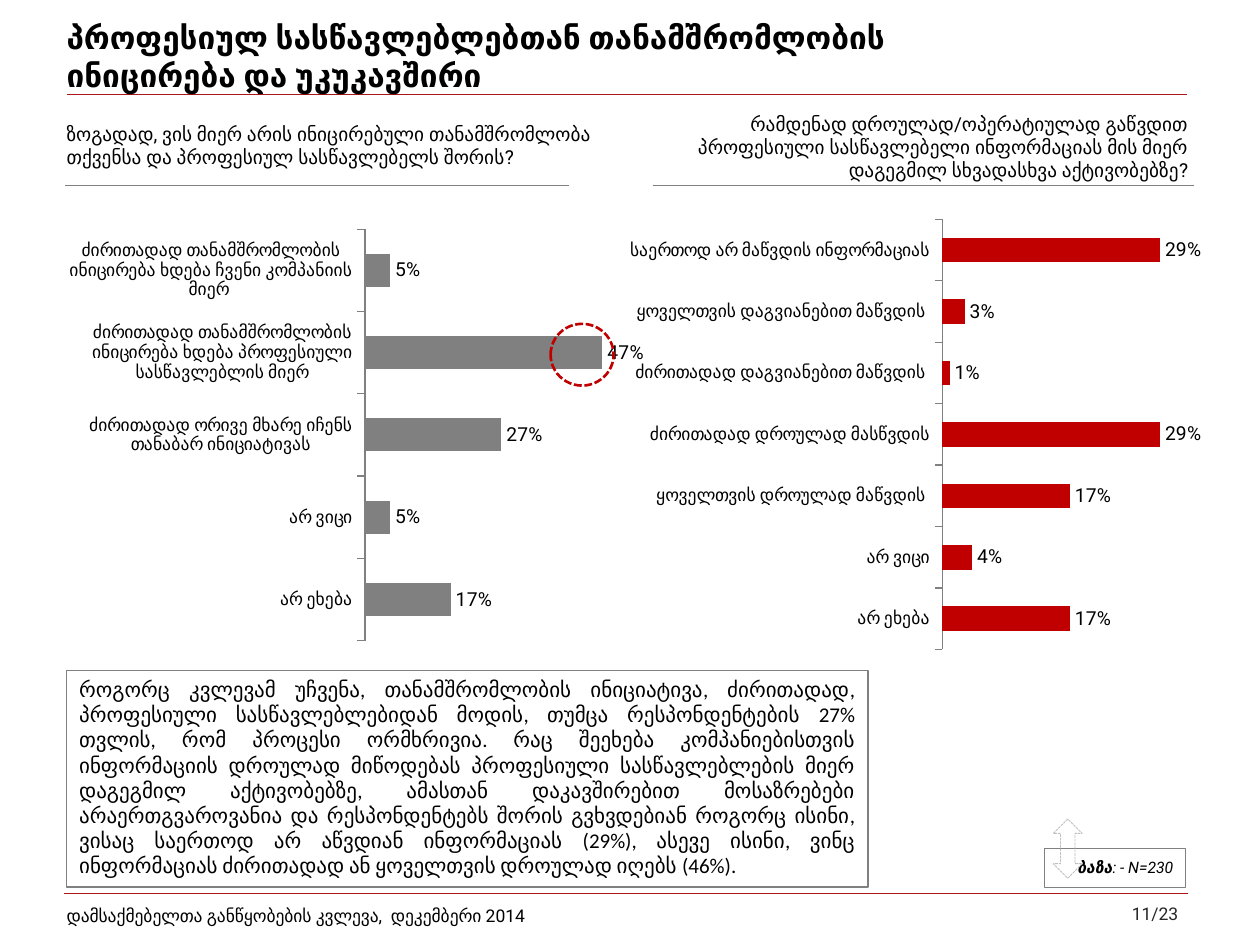
from dataclasses import dataclass

from lxml import etree
from pptx import Presentation
from pptx.chart.data import CategoryChartData
from pptx.dml.color import RGBColor
from pptx.enum.chart import XL_CHART_TYPE, XL_LABEL_POSITION, XL_TICK_LABEL_POSITION, XL_TICK_MARK
from pptx.enum.dml import MSO_LINE
from pptx.enum.shapes import MSO_CONNECTOR, MSO_SHAPE
from pptx.enum.text import MSO_ANCHOR, PP_ALIGN
from pptx.oxml import parse_xml
from pptx.oxml.ns import nsdecls, qn
from pptx.util import Inches, Pt


@dataclass(frozen=True)
class Theme:
    font: str = "Roboto"
    body_font: str = "Calibri"
    black: str = "000000"
    dark: str = "262626"
    grey: str = "808080"
    light: str = "BFBFBF"
    red: str = "C00000"
    rule: str = "AC161B"
    title: int = 18
    body: int = 12
    question: int = 11
    small: int = 10
    note: int = 9


T = Theme()


def rgb(color):
    return RGBColor.from_string(color)


def inches(box):
    return [Inches(v) for v in box]


def set_font(font, size, color=T.black, name=T.font, bold=False, italic=False):
    font.size, font.name = Pt(size), name
    font.bold, font.italic = bold, italic
    font.color.rgb = rgb(color)


def add_run(p, text, size, **style):
    r = p.add_run()
    r.text = text
    set_font(r.font, size, **style)


def set_frame(sp, align, anchor):
    tf = sp.text_frame
    tf.word_wrap = True
    tf.vertical_anchor = anchor
    p = tf.paragraphs[0]
    p.alignment = align
    return p


def add_text(slide, box, text, size, align=PP_ALIGN.LEFT, anchor=MSO_ANCHOR.MIDDLE, **style):
    p = set_frame(slide.shapes.add_textbox(*inches(box)), align, anchor)
    for i, line in enumerate(text.split("\n")):
        if i:
            p.add_line_break()
        add_run(p, line, size, **style)


def add_rule(slide, x1, x2, y, color):
    line = slide.shapes.add_connector(MSO_CONNECTOR.STRAIGHT, *inches((x1, y, x2, y)))
    line.line.color.rgb = rgb(color)
    line.line.width = Pt(0.75)
    etree.SubElement(line._element.spPr, qn("a:effectLst"))


def add_outline(slide, kind, box, color, width, dash=None):
    sp = slide.shapes.add_shape(kind, *inches(box))
    sp.shadow.inherit = False
    sp.fill.background()
    sp.line.color.rgb = rgb(color)
    sp.line.width = Pt(width)
    if dash:
        sp.line.dash_style = dash
    return sp


def add_bars(slide, box, answers, color, maximum):
    data = CategoryChartData(number_format="0%")
    data.categories = list(answers)
    data.add_series("Series 1", list(answers.values()))
    chart = slide.shapes.add_chart(XL_CHART_TYPE.BAR_CLUSTERED, *inches(box), data).chart
    chart.has_legend = chart.has_title = False
    set_font(chart.font, T.title, name=T.body_font)

    axis = chart.category_axis
    axis.reverse_order = True
    axis.major_tick_mark = XL_TICK_MARK.OUTSIDE
    axis.tick_label_position = XL_TICK_LABEL_POSITION.LOW
    axis.format.line.color.rgb = rgb(T.grey)
    axis.format.line.width = Pt(0.75)
    set_font(axis.tick_labels.font, T.small)

    values = chart.value_axis
    values.visible = values.has_major_gridlines = False
    values.minimum_scale, values.maximum_scale = 0, maximum

    plot = chart.plots[0]
    plot.gap_width = 150
    plot.vary_by_categories = False
    fill = plot.series[0].format.fill
    fill.solid()
    fill.fore_color.rgb = rgb(color)
    plot.has_data_labels = True
    labels = plot.data_labels
    labels.show_value = True
    labels.number_format, labels.number_format_is_linked = "0%", False
    labels.position = XL_LABEL_POSITION.OUTSIDE_END
    set_font(labels.font, T.question)

    area = plot._element.getparent()
    for old in area.findall(qn("c:layout")):
        area.remove(old)
    place = {"xMode": "edge", "yMode": "edge", "x": 0.495, "y": 0.012, "w": 0.418, "h": 0.988}
    parts = "".join(f'<c:{k} val="{v}"/>' for k, v in place.items())
    area.insert(0, parse_xml(
        f'<c:layout {nsdecls("c")}><c:manualLayout><c:layoutTarget val="inner"/>'
        f'{parts}</c:manualLayout></c:layout>'))


def add_header(slide, x, y, w):
    add_rule(slide, x + 0.1, x + w, y + 0.46, T.rule)
    add_text(slide, (x, y, 7.92, 0.31),
             "პროფესიულ სასწავლებლებთან თანამშრომლობის \nინიცირება და უკუკავშირი",
             T.title, bold=True)


def add_footer(slide, x, y, w):
    add_rule(slide, x + 0.08, x + w, y + 0.02, T.rule)
    add_text(slide, (x, y, 5.85, 0.4), "დამსაქმებელთა განწყობების კვლევა,  დეკემბერი 2014", T.small)
    add_text(slide, (x + w - 1.51, y - 0.03, 1.53, 0.42), "11/23", T.small, PP_ALIGN.RIGHT,
             color=T.dark)


def add_initiative(slide, x, y):
    add_bars(slide, (x + 0.09, y + 0.86, 4.8, 3.31), {
        "ძირითადად თანამშრომლობის ინიცირება ხდება ჩვენი კომპანიის მიერ ": 0.05,
        "ძირითადად თანამშრომლობის ინიცირება ხდება პროფესიული სასწავლებლის მიერ": 0.47,
        "ძირითადად ორივე მხარე იჩენს თანაბარ ინიციატივას": 0.27,
        "არ ვიცი": 0.05,
        "არ ეხება": 0.17,
    }, T.grey, 0.5)
    add_text(slide, (x, y, 4.66, 0.47),
             "ზოგადად, ვის მიერ არის ინიცირებული თანამშრომლობა თქვენსა და პროფესიულ "
             "სასწავლებელს შორის?", T.question, anchor=MSO_ANCHOR.TOP)
    add_rule(slide, x + 0.09, x + 4.09, y + 0.55, T.grey)
    add_outline(slide, MSO_SHAPE.OVAL, (x + 3.94, y + 1.65, 0.5, 0.49), T.red, 1.5,
                MSO_LINE.SQUARE_DOT)


def add_timeliness(slide, x, y):
    add_bars(slide, (x, y + 0.86, 5, 3.46), {
        "საერთოდ არ მაწვდის ინფორმაციას": 0.29,
        "ყოველთვის დაგვიანებით მაწვდის ": 0.03,
        "ძირითადად დაგვიანებით მაწვდის ": 0.01,
        "ძირითადად დროულად მასწვდის": 0.29,
        "ყოველთვის დროულად მაწვდის ": 0.17,
        "არ ვიცი": 0.04,
        "არ ეხება": 0.17,
    }, T.red, 0.35)
    add_text(slide, (x, y, 4.53, 0.66),
             "რამდენად დროულად/ოპერატიულად გაწვდით პროფესიული სასწავლებელი ინფორმაციას მის "
             "მიერ დაგეგმილ სხვადასხვა აქტივობებზე?", T.question, PP_ALIGN.RIGHT, MSO_ANCHOR.TOP)
    add_rule(slide, x + 0.18, x + 4.48, y + 0.63, T.grey)


def add_summary(slide, box):
    sp = add_outline(slide, MSO_SHAPE.RECTANGLE, box, T.grey, 0.75)
    p = set_frame(sp, PP_ALIGN.JUSTIFY, MSO_ANCHOR.TOP)
    add_run(p, "როგორც კვლევამ უჩვენა, თანამშრომლობის ინიციატივა, ძირითადად, პროფესიული "
               "სასწავლებლებიდან მოდის, თუმცა რესპონდენტების 27% თვლის, რომ პროცესი ორმხრივია. "
               "რაც შეეხება კომპანიებისთვის ინფორმაციის დროულად მიწოდებას პროფესიული "
               "სასწავლებლების მიერ დაგეგმილ აქტივობებზე, ამასთან დაკავშირებით მოსაზრებები "
               "არაერთგვაროვანია და რესპონდენტებს შორის გვხვდებიან როგორც ისინი, ვისაც საერთოდ "
               "არ აწვდიან ინფორმაციას (29%), ასევე ისინი, ვინც ინფორმაციას ძირითადად ან "
               "ყოველთვის დროულად იღებს (46%). ", T.body, name=T.body_font)


def add_base(slide, x, y):
    sp = add_outline(slide, MSO_SHAPE.RECTANGLE, (x, y, 1.12, 0.31), T.grey, 0.5)
    p = set_frame(sp, PP_ALIGN.RIGHT, MSO_ANCHOR.MIDDLE)
    add_run(p, "ბაზა", T.note, bold=True, italic=True)
    add_run(p, ": - N=230", T.note, italic=True)
    add_outline(slide, MSO_SHAPE.UP_DOWN_ARROW, (x + 0.07, y - 0.23, 0.23, 0.47), T.light, 0.5,
                MSO_LINE.SQUARE_DOT)


def main():
    prs = Presentation()
    prs.slide_width, prs.slide_height = Inches(10), Inches(7.5)
    slide = prs.slides.add_slide(prs.slide_layouts[6])
    add_header(slide, 0.43, 0.29, 8.99)
    add_footer(slide, 0.43, 7.07, 9)
    add_timeliness(slide, 5, 0.84)
    add_initiative(slide, 0.43, 0.92)
    add_base(slide, 8.29, 6.73)
    add_summary(slide, (0.53, 5.32, 6.36, 1.72))
    prs.save("out.pptx")


if __name__ == "__main__":
    main()
